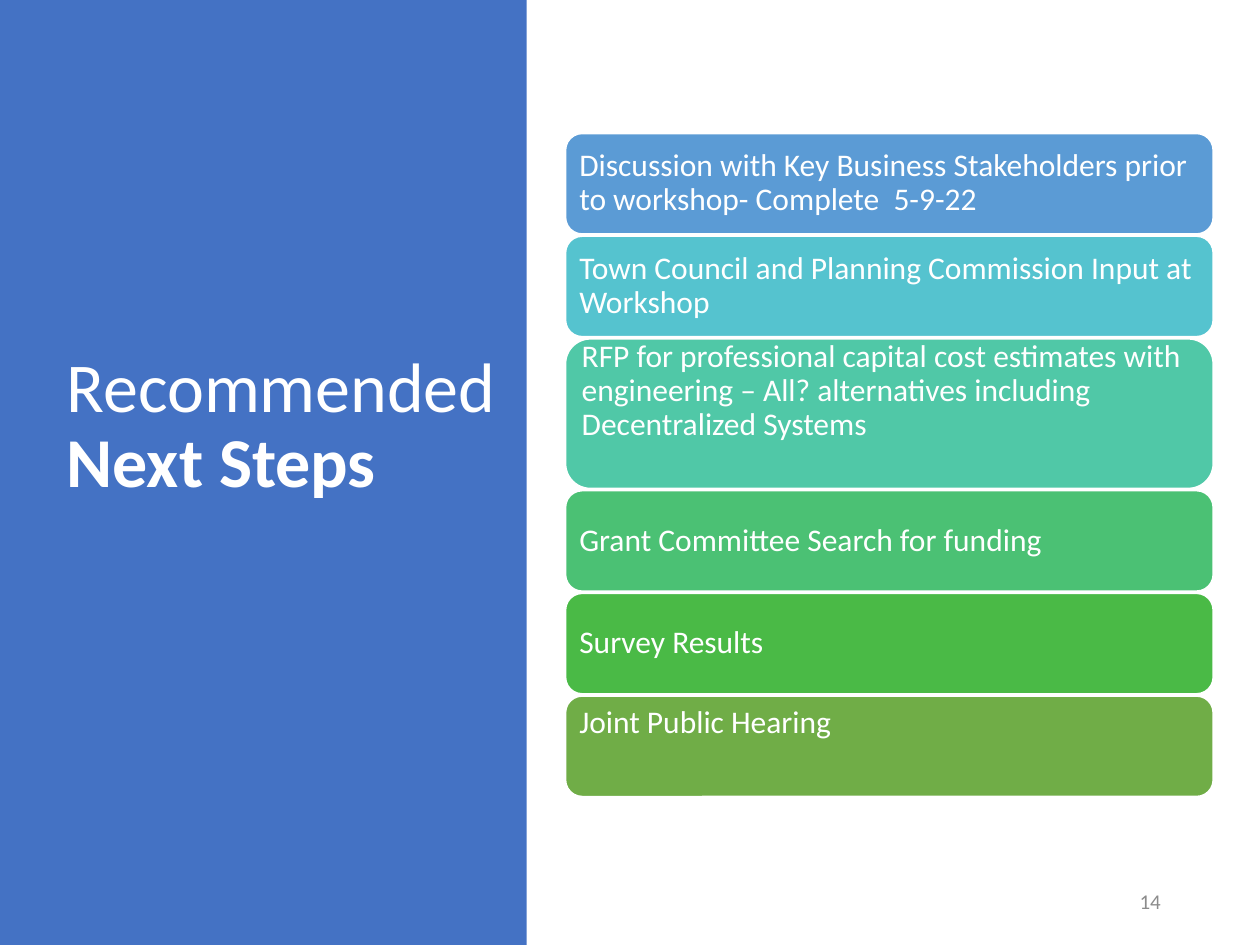
from pptx import Presentation
from pptx import util as u
from pptx.dml.color import RGBColor
from pptx.enum import shapes, text

COLORS = {
    "panel": "4472C4",
    "white": "FFFFFF",
    "number": "8C8C8C",
    "blue": "5B9BD5",
    "cyan": "55C3CF",
    "teal": "50C8A7",
    "mint": "4BC174",
    "green": "4ABA46",
    "olive": "70AD47",
}
FONT = "Calibri"
TITLE_LINES = [("Recommended", False), ("Next Steps", True)]
PAGE_NUMBER = "14"

REGULAR, TALL = 2.03, 3.02  # card heights in cm
RAISED = 0.91  # extra bottom margin that lifts a card's text above the middle

# wording, colour, height, extra bottom margin
STEPS = [
    ("Discussion with Key Business Stakeholders prior to workshop- Complete  5-9-22",
     "blue", REGULAR, 0),
    ("Town Council and Planning Commission Input at Workshop", "cyan", REGULAR, 0),
    ("RFP for professional capital cost estimates with engineering – All? "
     "alternatives including Decentralized Systems", "teal", TALL, RAISED),
    ("Grant Committee Search for funding", "mint", REGULAR, 0),
    ("Survey Results", "green", REGULAR, 0),
    ("Joint Public Hearing", "olive", REGULAR, RAISED),
]
CARD_LEFT, CARD_TOP, CARD_WIDTH, CARD_GAP = 11.4, 2.69, 13.06, 0.04
CARD_MARGIN = 0.18


def color(name):
    return RGBColor.from_string(COLORS[name])


def add_run(paragraph, wording, size, color_name, bold=False):
    run = paragraph.add_run()
    run.text = wording
    run.font.name = FONT
    run.font.size = u.Pt(size)
    run.font.bold = bold
    run.font.color.rgb = color(color_name)


def add_panel(slide):
    """Add the left colour panel behind the title."""
    panel = slide.shapes.add_shape(
        shapes.MSO_SHAPE.RECTANGLE, 0, 0, u.Cm(10.62), u.Cm(19.05))
    panel.shadow.inherit = False
    panel.fill.solid()
    panel.fill.fore_color.rgb = color("panel")
    panel.line.fill.background()
    slide.shapes.title.element.addprevious(panel.element)


def fill_title(title):
    title.left, title.top = u.Cm(1.09), u.Cm(1.73)
    title.width, title.height = u.Cm(9.2), u.Cm(13.77)
    frame = title.text_frame
    frame.word_wrap = True
    frame.auto_size = text.MSO_AUTO_SIZE.NONE
    frame.vertical_anchor = text.MSO_ANCHOR.MIDDLE
    paragraph = frame.paragraphs[0]
    paragraph.alignment = text.PP_ALIGN.LEFT
    paragraph.line_spacing = 0.9
    for index, (wording, bold) in enumerate(TITLE_LINES):
        if index:
            paragraph.add_line_break()
        add_run(paragraph, wording, 40, "white", bold)


def add_card(slide, top, wording, color_name, height, extra_bottom):
    card = slide.shapes.add_shape(
        shapes.MSO_SHAPE.ROUNDED_RECTANGLE,
        u.Cm(CARD_LEFT), u.Cm(top), u.Cm(CARD_WIDTH), u.Cm(height))
    card.shadow.inherit = False
    card.fill.solid()
    card.fill.fore_color.rgb = color(color_name)
    card.line.color.rgb = color("white")
    card.line.width = u.Pt(1)
    frame = card.text_frame
    frame.word_wrap = True
    frame.vertical_anchor = text.MSO_ANCHOR.MIDDLE
    frame.margin_left = frame.margin_right = frame.margin_top = u.Cm(CARD_MARGIN)
    frame.margin_bottom = u.Cm(CARD_MARGIN + extra_bottom)
    paragraph = frame.paragraphs[0]
    paragraph.alignment = text.PP_ALIGN.LEFT
    paragraph.line_spacing = 0.9
    add_run(paragraph, wording, 18, "white")


def add_page_number(slide):
    box = slide.shapes.add_textbox(u.Cm(17.93), u.Cm(17.65), u.Cm(5.72), u.Cm(1.02))
    frame = box.text_frame
    frame.word_wrap = True
    frame.vertical_anchor = text.MSO_ANCHOR.MIDDLE
    paragraph = frame.paragraphs[0]
    paragraph.alignment = text.PP_ALIGN.RIGHT
    add_run(paragraph, PAGE_NUMBER, 12, "number")


def main():
    presentation = Presentation()
    presentation.slide_width, presentation.slide_height = u.Cm(25.4), u.Cm(19.05)
    slide = presentation.slides.add_slide(
        presentation.slide_layouts.get_by_name("Title Only"))
    add_panel(slide)
    fill_title(slide.shapes.title)
    top = CARD_TOP
    for wording, color_name, height, extra_bottom in STEPS:
        add_card(slide, top, wording, color_name, height, extra_bottom)
        top += height + CARD_GAP
    add_page_number(slide)
    presentation.save("out.pptx")


if __name__ == "__main__":
    main()
